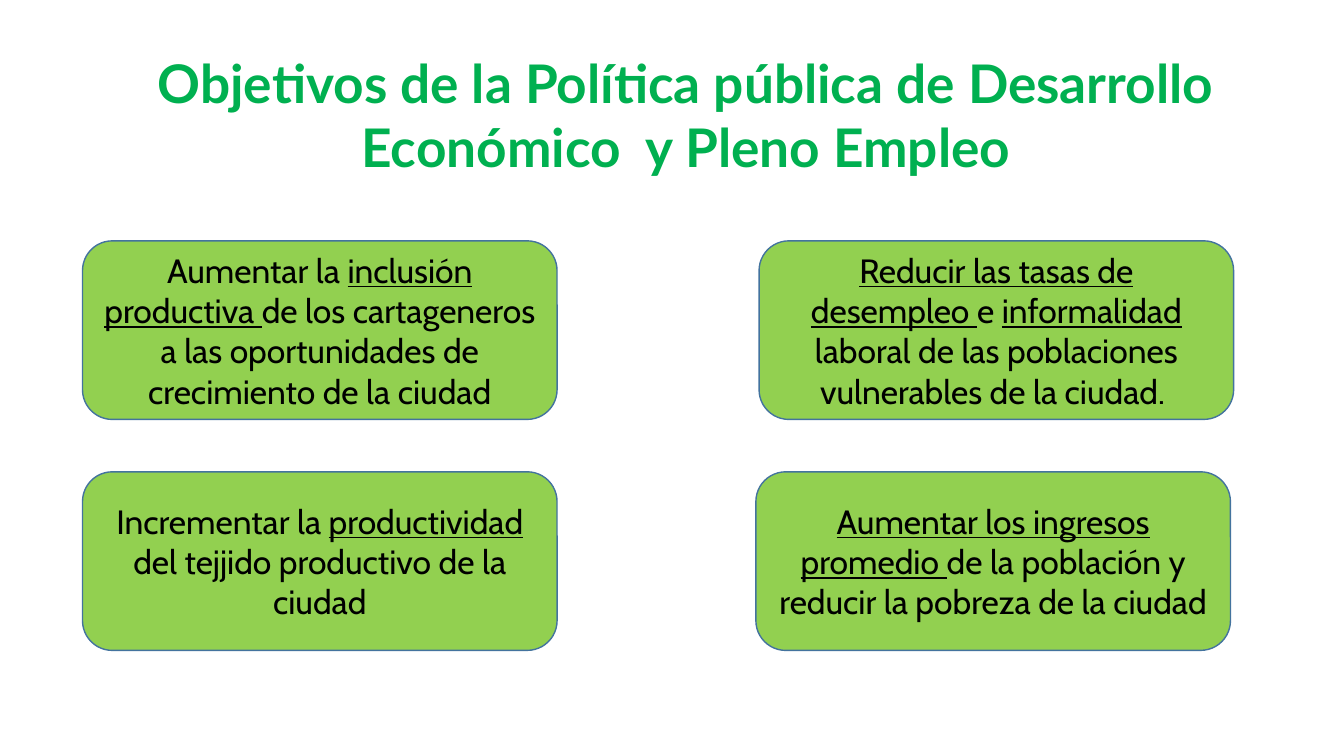
"""Builds the slide on the goals of the economic development policy."""
from dataclasses import dataclass

from pptx import Presentation
from pptx.dml.color import RGBColor as Rgb
from pptx.enum.shapes import MSO_SHAPE as Preset
from pptx.enum.text import MSO_ANCHOR as Anchor, MSO_AUTO_SIZE as AutoSize, PP_ALIGN as Align
from pptx.util import Cm, Pt


@dataclass(frozen=True)
class Theme:
    """Colours, fonts and type sizes of the slide."""
    paper: Rgb = Rgb.from_string("FFFFFF")
    heading: Rgb = Rgb.from_string("00B050")
    card: Rgb = Rgb.from_string("92D050")
    outline: Rgb = Rgb.from_string("43739E")
    ink: Rgb = Rgb.from_string("000000")
    heading_font: str = "Lato"
    body_font: str = "Cabin"
    heading_size: int = 38
    body_size: int = 24


def write(paragraph, text, font, size, colour, bold=False, underline=False):
    """Adds one formatted run to a paragraph."""
    run = paragraph.add_run()
    run.text = text
    run.font.name = font
    run.font.size = Pt(size)
    run.font.color.rgb = colour
    run.font.bold = bold
    run.font.underline = underline


class GoalsSlide:
    """Holds the theme and the slide being built."""

    def __init__(self, deck, theme):
        """Adds a title-only slide to the deck."""
        self.theme = theme
        self.slide = deck.slides.add_slide(deck.slide_layouts[5])

    def heading(self, text, left, top, width, height):
        """Places and formats the title."""
        title = self.slide.shapes.title
        title.left, title.top, title.width, title.height = map(Cm, (left, top, width, height))
        title.fill.solid()
        title.fill.fore_color.rgb = self.theme.paper
        frame = title.text_frame
        frame.auto_size = AutoSize.NONE
        frame.word_wrap = True
        frame.vertical_anchor = Anchor.TOP
        paragraph = frame.paragraphs[0]
        paragraph.alignment = Align.CENTER
        write(paragraph, text, self.theme.heading_font, self.theme.heading_size,
              self.theme.heading, bold=True)

    def goal(self, phrases, left, top, width=11.96, height=4.5):
        """Draws a rounded card with a goal, given as (phrase, underlined) pairs."""
        card = self.slide.shapes.add_shape(Preset.ROUNDED_RECTANGLE,
                                           *map(Cm, (left, top, width, height)))
        card.shadow.inherit = False
        card.fill.solid()
        card.fill.fore_color.rgb = self.theme.card
        card.line.color.rgb = self.theme.outline
        card.line.width = Pt(1)
        frame = card.text_frame
        frame.word_wrap = True
        frame.vertical_anchor = Anchor.MIDDLE
        paragraph = frame.paragraphs[0]
        paragraph.alignment = Align.CENTER
        for phrase, underlined in phrases:
            write(paragraph, phrase, self.theme.body_font, self.theme.body_size,
                  self.theme.ink, underline=underlined)


def main():
    """Builds and saves the deck."""
    deck = Presentation()
    deck.slide_width, deck.slide_height = Cm(33.87), Cm(19.05)
    page = GoalsSlide(deck, Theme())
    page.heading("Objetivos de la Política pública de Desarrollo Económico  y Pleno Empleo",
                 3.51, 1.14, 27.56, 3.51)

    upper, lower = 6.07, 11.89
    productivity = [("Incrementar la ", False), ("productividad", True),
                    (" del tejjido productivo de la ciudad", False)]
    inclusion = [("Aumentar la ", False), ("inclusión productiva ", True),
                 ("de los cartageneros a las oportunidades de crecimiento de la ciudad", False)]
    employment = [("Reducir las tasas de desempleo ", True), ("e ", False),
                  ("informalidad", True),
                  (" laboral de las poblaciones vulnerables de la ciudad. ", False)]
    income = [("Aumentar los ingresos promedio ", True),
              ("de la población y reducir la pobreza de la ciudad", False)]
    for phrases, left, top in ((productivity, 2.08, lower), (inclusion, 2.08, upper),
                               (employment, 19.13, upper), (income, 19.05, lower)):
        page.goal(phrases, left, top)

    deck.save("out.pptx")


if __name__ == "__main__":
    main()
